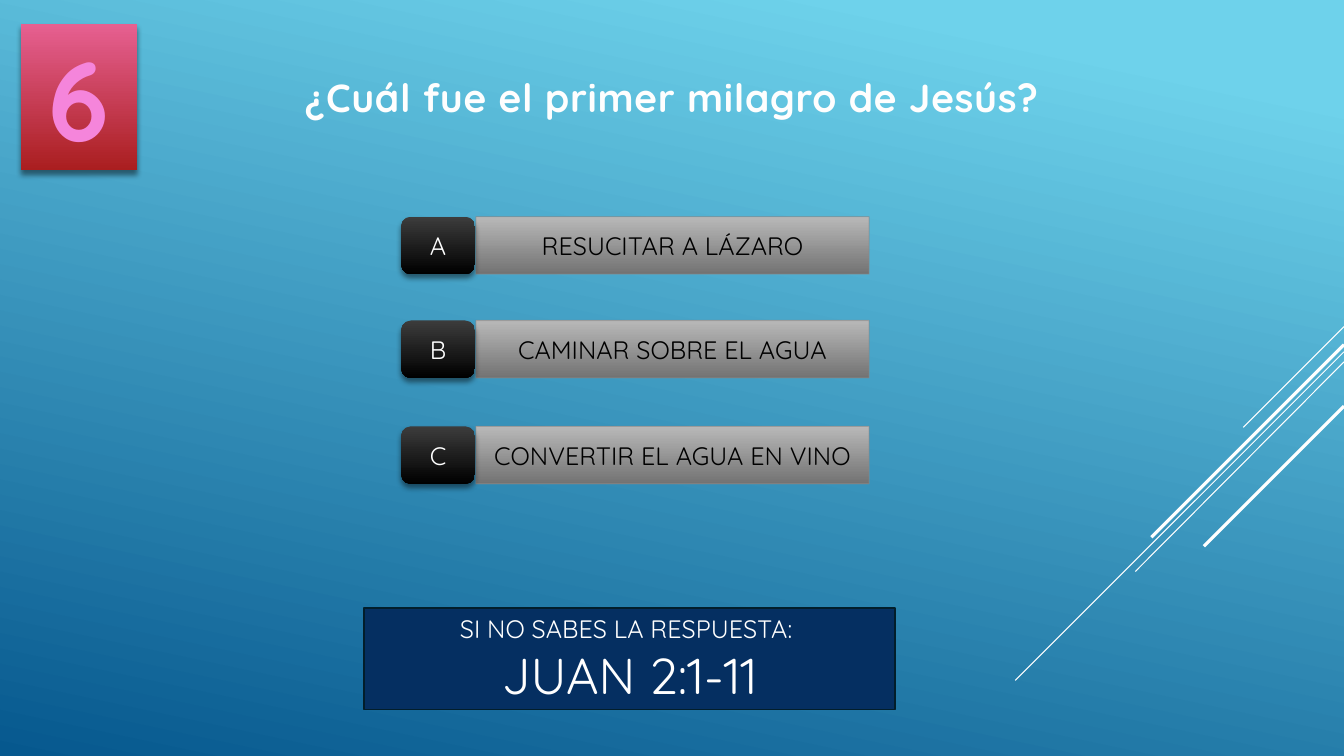
from dataclasses import dataclass
from typing import Optional

from lxml import etree
from pptx import Presentation
from pptx.dml.color import RGBColor
from pptx.enum.dml import MSO_FILL
from pptx.enum.shapes import MSO_CONNECTOR, MSO_SHAPE
from pptx.enum.text import MSO_ANCHOR, MSO_AUTO_SIZE, PP_ALIGN
from pptx.oxml.ns import qn
from pptx.util import Emu, Pt

PX = 9144  # 100 px to the inch
FONT = "Quicksand"
RECT, ROUND = MSO_SHAPE.RECTANGLE, MSO_SHAPE.ROUNDED_RECTANGLE
STRAIGHT = MSO_CONNECTOR.STRAIGHT
TOP, MIDDLE = MSO_ANCHOR.TOP, MSO_ANCHOR.MIDDLE
CENTER = PP_ALIGN.CENTER
GROW = MSO_AUTO_SIZE.SHAPE_TO_FIT_TEXT
SOLID = MSO_FILL.SOLID

HEX = {
    "sky": "6ED2EB", "sea": "06588E", "white": "FFFFFF", "pale": "FEFEFE",
    "navy": "052F61", "edge": "021E2B", "silver": "B8B8B8", "gray": "737373",
    "rim": "898989", "coal": "3C3C3C", "black": "000000", "rose": "E66091",
    "red": "AA1E1F", "pink": "F585DB", "plum": "A50E82",
}


@dataclass
class Run:
    text: str
    size: int
    color: str
    bold: bool = False
    rim: Optional[tuple[str, float]] = None
    gap: int = 0
    shade: bool = False


@dataclass
class Box:
    left: int
    top: int
    width: int
    height: int
    runs: list[Run]  # one run to a paragraph
    fill: tuple[str, ...] = ()
    kind: MSO_SHAPE = RECT
    line: Optional[tuple[str, float, int]] = None  # color, points, percent
    shade: bool = False
    grow: bool = False


@dataclass
class Ray:
    top: int  # where it meets the right edge
    left: int
    foot: int
    weight: float


def rgb(name: str) -> RGBColor:
    return RGBColor.from_string(HEX[name])


def add_color(parent, name: str, alpha: int = 100) -> None:
    color = etree.SubElement(parent, qn("a:srgbClr"), val=HEX[name])
    if alpha < 100:
        etree.SubElement(color, qn("a:alpha"), val=str(alpha * 1000))


def add_shade(effects, blur: float, dist: float, angle: int, alpha: int) -> None:
    outer = etree.SubElement(
        effects, qn("a:outerShdw"), blurRad=str(Pt(blur)), dist=str(Pt(dist)),
        dir=str(angle * 60000), algn="ctr", rotWithShape="0")
    add_color(outer, "black", alpha)


def set_fill(fill, names: tuple[str, ...], angle: int = 90, start: float = 0) -> None:
    if len(names) == 1:
        fill.solid()
        fill.fore_color.rgb = rgb(names[0])
        return
    fill.gradient()
    fill.gradient_angle = 360 - angle
    for stop, name, place in zip(fill.gradient_stops, names, (start, 1)):
        stop.color.rgb = rgb(name)
        stop.position = place


def add_run(para, item: Run) -> None:
    run = para.add_run()
    run.text = item.text
    font = run.font
    font.name, font.size, font.bold = FONT, Pt(item.size), item.bold
    font.color.rgb = rgb(item.color)
    props = run._r.get_or_add_rPr()
    if item.gap:
        props.set("spc", str(item.gap))
    if item.rim:
        name, weight = item.rim
        line = etree.Element(qn("a:ln"), w=str(Pt(weight)))
        add_color(etree.SubElement(line, qn("a:solidFill")), name)
        props.insert(0, line)
    if item.shade:
        effects = etree.Element(qn("a:effectLst"))
        add_shade(effects, 3, 3, 45, 40)
        props.find(qn("a:solidFill")).addnext(effects)


def add_text(shape, box: Box) -> None:
    frame = shape.text_frame
    frame.word_wrap = True
    frame.vertical_anchor = TOP if box.grow else MIDDLE
    if box.grow:
        frame.auto_size = GROW
    for i, item in enumerate(box.runs):
        para = frame.add_paragraph() if i else frame.paragraphs[0]
        para.alignment = CENTER
        add_run(para, item)


def add_box(slide, box: Box) -> None:
    place = [Emu(n * PX) for n in (box.left, box.top, box.width, box.height)]
    if not box.fill:
        add_text(slide.shapes.add_textbox(*place), box)
        return
    shape = slide.shapes.add_shape(box.kind, *place)
    set_fill(shape.fill, box.fill)
    if box.line:
        name, weight, alpha = box.line
        shape.line.color.rgb = rgb(name)
        shape.line.width = Pt(weight)
        if alpha < 100 and shape.line.fill.type == SOLID:
            color = shape.line._ln.find(".//" + qn("a:srgbClr"))
            etree.SubElement(color, qn("a:alpha"), val=str(alpha * 1000))
    else:
        shape.line.fill.background()
    shape.shadow.inherit = False
    if box.shade:
        add_shade(shape._element.spPr.find(qn("a:effectLst")), 4, 3, 90, 46)
    add_text(shape, box)


def add_ray(slide, ray: Ray, right: int) -> None:
    ends = [Emu(n * PX) for n in (right, ray.top, ray.left, ray.foot)]
    line = slide.shapes.add_connector(STRAIGHT, *ends)
    line.line.color.rgb = rgb("white")
    line.line.width = Pt(ray.weight)
    etree.SubElement(line._element.spPr, qn("a:effectLst"))


WIDE, HIGH = 1333, 750
RAYS = [
    Ray(324, 1233, 424, 0.75),
    Ray(349, 1007, 675, 0.75),
    Ray(359, 1126, 567, 0.75),
    Ray(342, 1142, 533, 2.25),
    Ray(403, 1194, 542, 2.25),
]
TITLE = Box(151, 68, 1031, 57, [
    Run("¿Cuál fue el primer milagro de Jesús?", 28, "pale", True,
        ("navy", 0.75), 50, True)], grow=True)
CHOICES = [
    ("A", "RESUCITAR A LÁZARO", 215),
    ("B", "CAMINAR SOBRE EL AGUA", 318),
    ("C", "CONVERTIR EL AGUA EN VINO", 423),
]
BARS = [Box(472, top, 390, 57, [Run(text, 18, "black")], ("silver", "gray"),
            line=("rim", 0.75, 60)) for _, text, top in CHOICES]
KEYS = [Box(398, top, 73, 57, [Run(key, 18, "white")], ("coal", "black"),
            ROUND, shade=True) for key, _, top in CHOICES]
HINT = Box(361, 603, 527, 101, [
    Run("SI NO SABES LA RESPUESTA: ", 18, "white"),
    Run("JUAN 2:1-11", 36, "white")], ("navy",), line=("edge", 1.25, 100))
BADGE = Box(21, 24, 115, 145, [Run("6", 80, "pink", True, ("plum", 1.75))],
            ("rose", "red"), shade=True, grow=True)


def main() -> None:
    deck = Presentation()
    deck.slide_width, deck.slide_height = Emu(WIDE * PX), Emu(HIGH * PX)
    slide = deck.slides.add_slide(deck.slide_layouts[6])
    # Backdrop
    set_fill(slide.background.fill, ("sky", "sea"), 102, 0.1)
    for ray in RAYS:
        add_ray(slide, ray, WIDE)
    # Question, choices, hint and number
    for box in [TITLE, *BARS, *KEYS, HINT, BADGE]:
        add_box(slide, box)
    deck.save("out.pptx")


if __name__ == "__main__":
    main()
